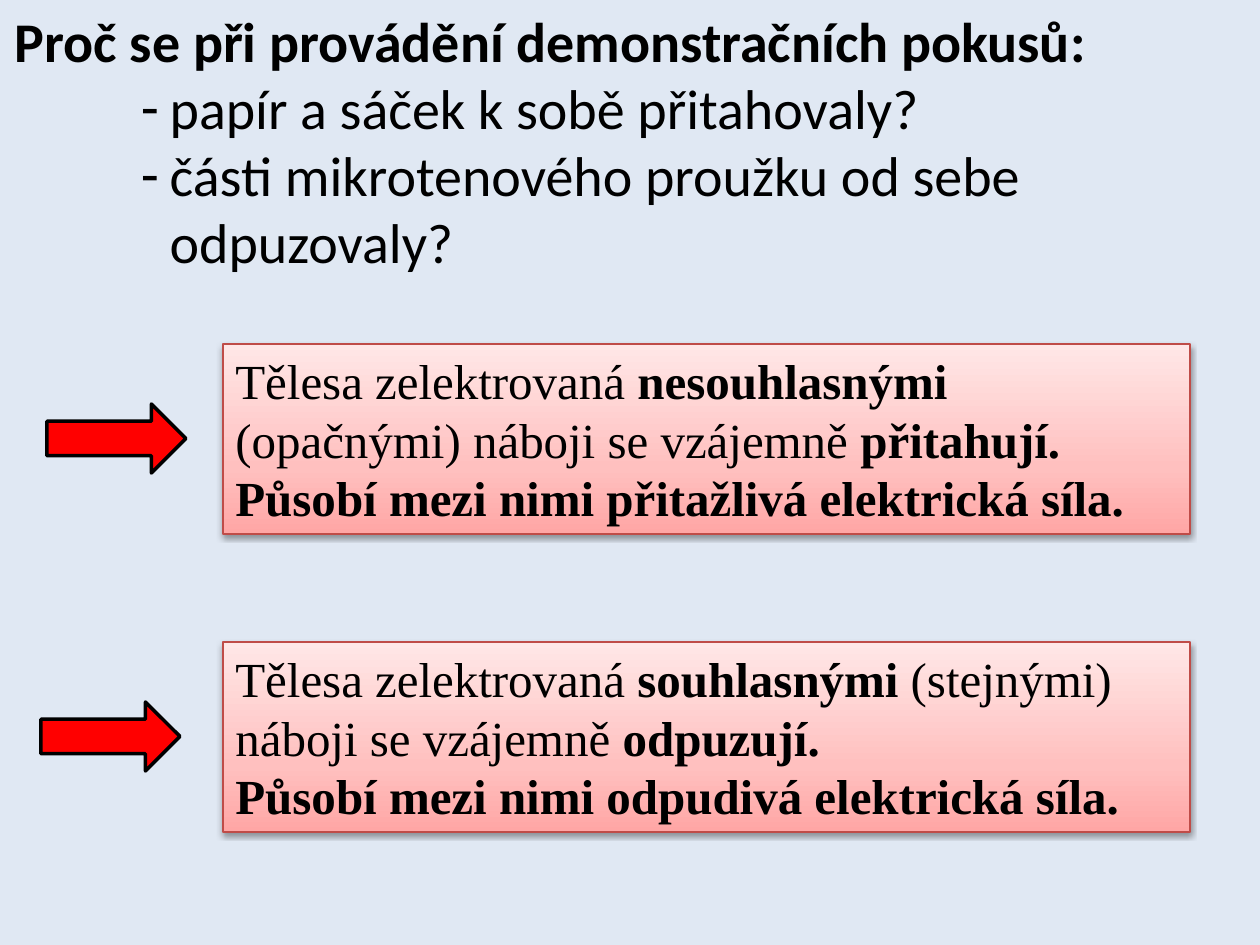
from copy import deepcopy

from lxml import etree
from pptx import Presentation
from pptx.dml.color import RGBColor
from pptx.enum.shapes import MSO_SHAPE
from pptx.enum.text import MSO_ANCHOR, MSO_AUTO_SIZE, PP_ALIGN
from pptx.oxml.ns import qn
from pptx.util import Pt

RECT, ARROW = MSO_SHAPE.RECTANGLE, MSO_SHAPE.RIGHT_ARROW
LEFT, TOP, NO_FIT = PP_ALIGN.LEFT, MSO_ANCHOR.TOP, MSO_AUTO_SIZE.NONE
PX = 914400 / 126
COLORS = {
    "background": "E0E8F3",
    "text": "000000",
    "arrow": "FF0000",
    "box_line": "BF4C48",
    "shadow": "000000",
}
BOX_STOPS = [(0, "FFA6A5"), (0.35, "FFC0BF"), (1, "FFE7E7")]
SERIF, SANS = "Times New Roman", "Calibri"


def px(n):
    return round(n * PX)


def rgb(name):
    return RGBColor.from_string(COLORS[name])


def place(sp, x, y, w, h):
    sp.left, sp.top, sp.width, sp.height = px(x), px(y), px(w), px(h)


def write(sp, paragraphs, font=SANS, size=32, color="text"):
    tf = sp.text_frame
    tf.word_wrap = True
    tf.auto_size = NO_FIT
    tf.vertical_anchor = TOP
    for i, runs in enumerate(paragraphs):
        p = tf.paragraphs[0] if i == 0 else tf.add_paragraph()
        p.alignment = LEFT
        p.space_before = Pt(0)
        for text, bold in runs:
            r = p.add_run()
            r.text = text
            r.font.name, r.font.size, r.font.bold = font, Pt(size), bold
            r.font.color.rgb = rgb(color)
    return tf


def add_dashes(tf, margin, hang):
    for p in tf.paragraphs:
        pPr = p._p.get_or_add_pPr()
        pPr.set("marL", str(px(margin)))
        pPr.set("indent", str(-px(hang)))
        etree.SubElement(pPr, qn("a:buChar")).set("char", "-")


def fill_gradient(sp, stops):
    sp.fill.gradient()
    sp.fill.gradient_angle = 90
    gs_list = sp._element.spPr.find(".//" + qn("a:gsLst"))
    gs_list.insert(1, deepcopy(gs_list[0]))
    for stop, (position, color) in zip(sp.fill.gradient_stops, stops):
        stop.position = position
        stop.color.rgb = RGBColor.from_string(color)


def add_shadow(sp):
    sp.shadow.inherit = False
    effects = sp._element.spPr.find(qn("a:effectLst"))
    shadow = etree.SubElement(effects, qn("a:outerShdw"), blurRad="40000",
                              dist="20000", dir="5400000", rotWithShape="0")
    color = etree.SubElement(shadow, qn("a:srgbClr"), val=COLORS["shadow"])
    etree.SubElement(color, qn("a:alpha"), val="38000")


def add_question(s, x, y, w, heading, items):
    title, body = s.shapes.title, s.placeholders[1]
    place(title, x, y, w, 80)
    write(title, [[(heading, True)]])
    place(body, x, y + 67, w, 217)
    add_dashes(write(body, [[(item, False)] for item in items]), 155, 29)


def add_arrow(s, x, y):
    sp = s.shapes.add_shape(ARROW, px(x), px(y), px(139), px(69))
    sp.shadow.inherit = False
    sp.fill.solid()
    sp.fill.fore_color.rgb = rgb("arrow")
    sp.line.color.rgb = rgb("text")
    sp.line.width = Pt(2)


def add_answer(s, x, y, w, h, paragraphs, arrow_gap):
    sp = s.shapes.add_shape(RECT, px(x), px(y), px(w), px(h))
    fill_gradient(sp, BOX_STOPS)
    sp.line.color.rgb = rgb("box_line")
    sp.line.width = Pt(0.75)
    add_shadow(sp)
    write(sp, paragraphs, font=SERIF, size=28)
    add_arrow(s, x - arrow_gap - 139, y + 60)


def main():
    prs = Presentation()
    prs.slide_width, prs.slide_height = px(1260), px(945)
    s = prs.slides.add_slide(prs.slide_layouts[1])
    s.background.fill.solid()
    s.background.fill.fore_color.rgb = rgb("background")

    add_question(s, 2, 0, 1258, "Proč se při provádění demonstračních pokusů:", [
        "papír a sáček k sobě přitahovaly?",
        "části mikrotenového proužku od sebe odpuzovaly?",
    ])
    answers = [
        ("nesouhlasnými ", "(opačnými) náboji se vzájemně ", "přitahují.",
         "přitažlivá", 37),
        ("souhlasnými ", "(stejnými) náboji se vzájemně ", "odpuzují.",
         "odpudivá", 43),
    ]
    for i, (charge, middle, effect, force, gap) in enumerate(answers):
        add_answer(s, 223, 344 + 298 * i, 967, 190, [
            [("Tělesa zelektrovaná ", False), (charge, True),
             (middle, False), (effect, True)],
            [(f"Působí mezi nimi {force} elektrická síla.", True)],
        ], gap)
    prs.save("out.pptx")


if __name__ == "__main__":
    main()
